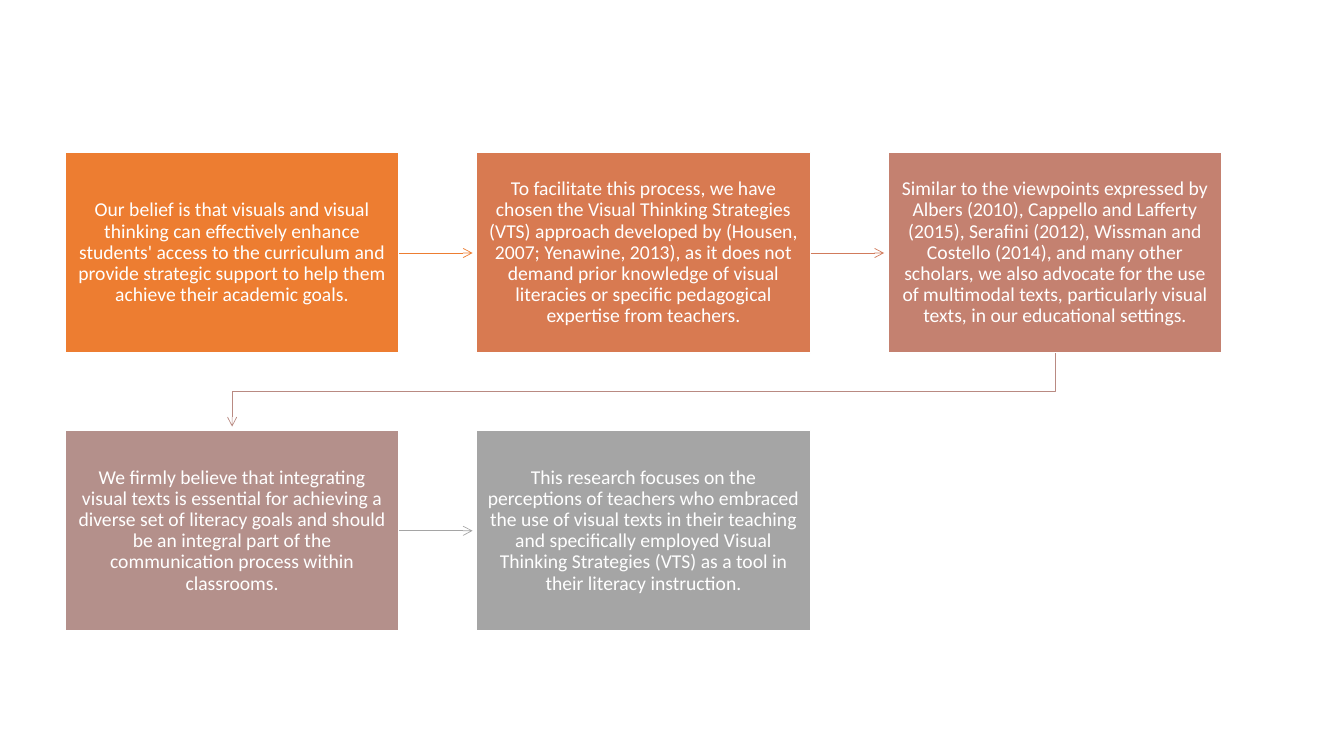
from dataclasses import dataclass

from lxml.etree import SubElement
from pptx import Presentation
from pptx.dml.color import RGBColor
from pptx.enum.shapes import MSO_CONNECTOR as Connector, MSO_SHAPE as Preset
from pptx.enum.text import MSO_ANCHOR as Anchor, PP_ALIGN as Align
from pptx.oxml.ns import qn
from pptx.util import Cm, Pt


@dataclass(frozen=True)
class Theme:
    """Colours, font and sizes of the slide."""
    font: str = "Calibri"
    text_size: float = 14
    text: str = "FFFFFF"
    border: str = "FFFFFF"
    border_width: float = 1
    arrow_width: float = 0.5
    steps: tuple = ("ED7D31", "D87A51", "C48170", "B4908B", "A5A5A5")
    arrows: tuple = ("ED7D31", "D17B5C", "B98A82", "A5A5A5")


THEME = Theme()
COLUMNS = 3
COLUMN_PITCH, ROW_PITCH = Cm(10.37), Cm(7)
STEP_WIDTH, STEP_HEIGHT = Cm(8.42), Cm(5.05)
ARROW_GAP = Cm(0.1)
INSET = Cm(0.27)

STEPS = (
    "Our belief is that visuals and visual thinking can effectively enhance "
    "students' access to the curriculum and provide strategic support to help "
    "them achieve their academic goals.",
    "To facilitate this process, we have chosen the Visual Thinking Strategies "
    "(VTS) approach developed by (Housen, 2007; Yenawine, 2013), as it does not "
    "demand prior knowledge of visual literacies or specific pedagogical "
    "expertise from teachers.",
    "Similar to the viewpoints expressed by Albers (2010), Cappello and Lafferty "
    "(2015), Serafini (2012), Wissman and Costello (2014), and many other "
    "scholars, we also advocate for the use of multimodal texts, particularly "
    "visual texts, in our educational settings.",
    "We firmly believe that integrating visual texts is essential for achieving "
    "a diverse set of literacy goals and should be an integral part of the "
    "communication process within classrooms.",
    "This research focuses on the perceptions of teachers who embraced the use "
    "of visual texts in their teaching and specifically employed Visual Thinking "
    "Strategies (VTS) as a tool in their literacy instruction.",
)


def write_text(shape, text, *, size, color, align=Align.CENTER, anchor=Anchor.MIDDLE):
    """Write one formatted paragraph into a shape."""
    frame = shape.text_frame
    frame.word_wrap = True
    frame.vertical_anchor = anchor
    frame.margin_left = frame.margin_right = INSET
    frame.margin_top = frame.margin_bottom = INSET
    paragraph = frame.paragraphs[0]
    paragraph.alignment = align
    paragraph.line_spacing = 0.9
    run = paragraph.add_run()
    run.text = text
    run.font.name = THEME.font
    run.font.size = Pt(size)
    run.font.color.rgb = RGBColor.from_string(color)


def style_arrow(arrow, color):
    """Give a line its colour, width and open arrowhead, without a shadow."""
    arrow.line.color.rgb = RGBColor.from_string(color)
    arrow.line.width = Pt(THEME.arrow_width)
    properties = arrow.element.spPr
    SubElement(properties.find(qn("a:ln")), qn("a:tailEnd"), type="arrow")
    SubElement(properties, qn("a:effectLst"))


def add_step(slide, left, top, text, color):
    """Add one filled step box with its text."""
    step = slide.shapes.add_shape(Preset.RECTANGLE, left, top, STEP_WIDTH, STEP_HEIGHT)
    step.shadow.inherit = False
    step.fill.solid()
    step.fill.fore_color.rgb = RGBColor.from_string(color)
    step.line.color.rgb = RGBColor.from_string(THEME.border)
    step.line.width = Pt(THEME.border_width)
    write_text(step, text, size=THEME.text_size, color=THEME.text)
    return step


def add_side_arrow(slide, source, target, color):
    """Point from one step to the next step in the same row."""
    middle = source.top + source.height // 2
    arrow = slide.shapes.add_connector(
        Connector.STRAIGHT, source.left + source.width, middle,
        target.left - ARROW_GAP, middle)
    arrow.begin_connect(source, 3)
    style_arrow(arrow, color)


def add_return_arrow(slide, source, target, color):
    """Bend from the end of one row to the start of the next."""
    start_x = source.left + source.width // 2
    end_x = target.left + target.width // 2
    bottom = source.top + source.height
    turn = (bottom + target.top) // 2
    builder = slide.shapes.build_freeform(start_x, bottom)
    builder.add_line_segments(
        [(start_x, turn), (end_x, turn), (end_x, target.top - ARROW_GAP)], close=False)
    arrow = builder.convert_to_shape()
    arrow.fill.background()
    style_arrow(arrow, color)


def add_process(slide, left, top):
    """Lay out the steps row by row and link each to the next."""
    steps = []
    for index, (text, color) in enumerate(zip(STEPS, THEME.steps)):
        row, column = divmod(index, COLUMNS)
        steps.append(add_step(
            slide, left + column * COLUMN_PITCH, top + row * ROW_PITCH, text, color))
    for source, target, color in zip(steps, steps[1:], THEME.arrows):
        add_arrow = add_side_arrow if source.top == target.top else add_return_arrow
        add_arrow(slide, source, target, color)


def main():
    """Build and save the slide."""
    presentation = Presentation()
    presentation.slide_width, presentation.slide_height = Cm(33.87), Cm(19.05)
    slide = presentation.slides.add_slide(presentation.slide_layouts[6])
    add_process(slide, Cm(1.64), Cm(3.85))
    presentation.save("out.pptx")


if __name__ == "__main__":
    main()
